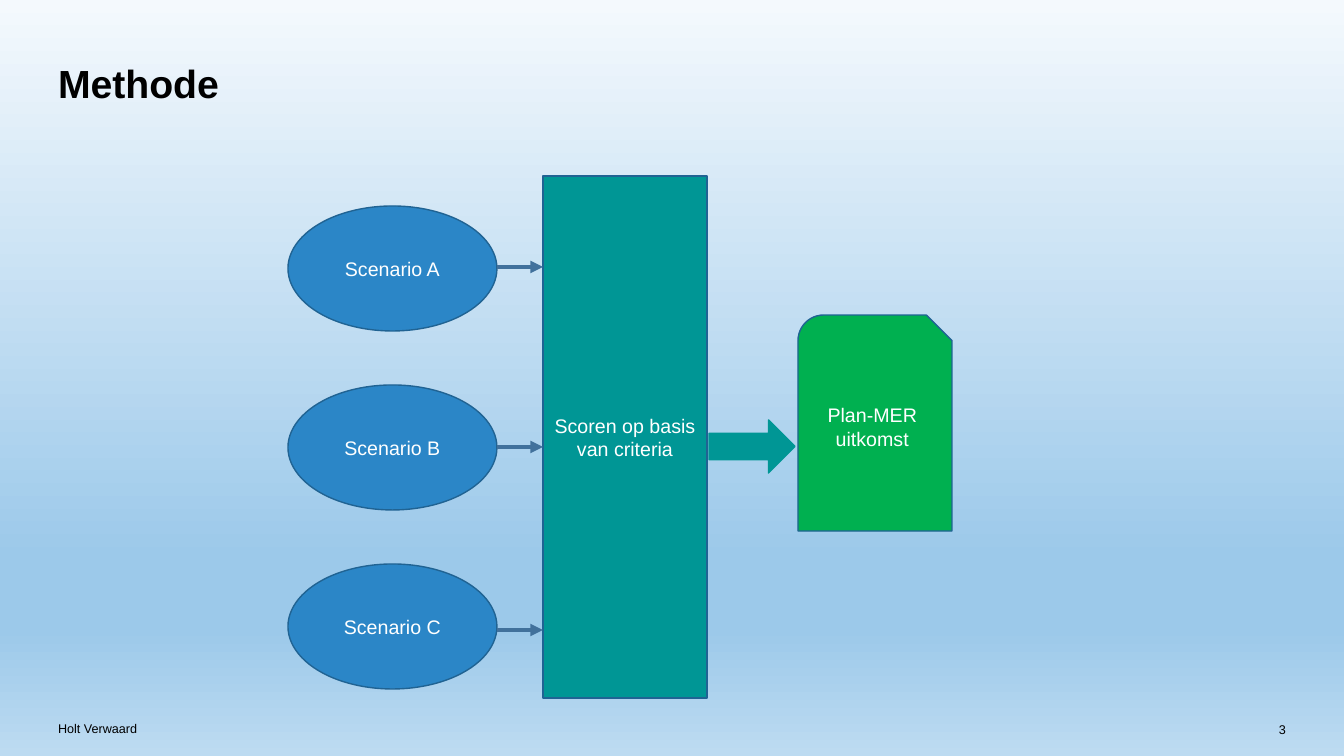
from lxml import etree
from pptx import Presentation
from pptx import util as u
from pptx.dml.color import RGBColor
from pptx.enum import shapes, text
from pptx.oxml import ns

PX = 12192000 / 1344
BLACK = RGBColor(0x00, 0x00, 0x00)
WHITE = RGBColor(0xFF, 0xFF, 0xFF)
BLUE = RGBColor(0x2B, 0x86, 0xC7)
OUTLINE = RGBColor(0x20, 0x63, 0x93)
ARROW = RGBColor(0x41, 0x71, 0x9C)
TEAL = RGBColor(0x00, 0x96, 0x95)
GREEN = RGBColor(0x00, 0xB0, 0x50)
SKY = [(0, RGBColor(0xF4, 0xF9, 0xFD)), (74, RGBColor(0x9C, 0xC9, 0xEA)),
       (83, RGBColor(0x9C, 0xC9, 0xEA)), (100, RGBColor(0xBD, 0xDB, 0xF1))]


def px(*lengths):
    return [round(n * PX) for n in lengths]


def write(sp, words, size, color, align, anchor, margin=None, bold=False):
    tf = sp.text_frame
    tf.word_wrap = True
    tf.vertical_anchor = anchor
    if margin is not None:
        tf.margin_left = tf.margin_right = tf.margin_top = tf.margin_bottom = margin
    p = tf.paragraphs[0]
    p.text = words
    p.alignment = align
    p.font.name = "Arial"
    p.font.size = u.Pt(size)
    p.font.bold = bold
    p.font.color.rgb = color


prs = Presentation()
prs.slide_width, prs.slide_height = px(1344, 756)
s = prs.slides.add_slide(prs.slide_layouts[5])

# Background gradient, top to bottom
fill = s.background.fill
fill.gradient()
fill.gradient_angle = 270
stops = next(s.element.iter(ns.qn("a:gsLst")))
for stop in list(stops):
    stops.remove(stop)
for position, color in SKY:
    stop = etree.SubElement(stops, ns.qn("a:gs"), pos=str(position * 1000))
    etree.SubElement(stop, ns.qn("a:srgbClr"), val=str(color))

# Title
title = s.shapes.title
title.left, title.top, title.width, title.height = px(58, 58, 1228, 50)
write(title, "Methode", 28, BLACK, text.PP_ALIGN.LEFT, text.MSO_ANCHOR.MIDDLE, 0, True)

# Footer and slide number
for words, box, align in [
    ("Holt Verwaard", (58, 721, 243, 16), text.PP_ALIGN.LEFT),
    ("3", (1223, 722, 63, 14), text.PP_ALIGN.RIGHT),
]:
    sp = s.shapes.add_textbox(*px(*box))
    write(sp, words, 9, BLACK, align, text.MSO_ANCHOR.TOP, 0)

# Scenarios, scoring block, block arrow and outcome
kind = shapes.MSO_SHAPE
blocks = [(kind.OVAL, (288, 206 + 179 * i, 209, 125), BLUE, OUTLINE, f"Scenario {letter}")
          for i, letter in enumerate("ABC")]
blocks += [
    (kind.RECTANGLE, (543, 176, 164, 522), TEAL, OUTLINE, "Scoren op basis van criteria"),
    (kind.RIGHT_ARROW, (709, 420, 86, 53), TEAL, TEAL, ""),
    (kind.SNIP_ROUND_RECTANGLE, (798, 315, 154, 216), GREEN, OUTLINE, "Plan-MER uitkomst"),
]
for shape_kind, box, color, outline, words in blocks:
    sp = s.shapes.add_shape(shape_kind, *px(*box))
    sp.shadow.inherit = False
    sp.fill.solid()
    sp.fill.fore_color.rgb = color
    sp.line.color.rgb = outline
    sp.line.width = u.Pt(1)
    if words:
        write(sp, words, 14, WHITE, text.PP_ALIGN.CENTER, text.MSO_ANCHOR.MIDDLE)

# Arrows from the scenarios to the scoring block
for y in (267, 447, 630):
    arrow = s.shapes.add_connector(shapes.MSO_CONNECTOR.STRAIGHT, *px(497, y, 543, y))
    arrow.line.color.rgb = ARROW
    arrow.line.width = u.Pt(3)
    etree.SubElement(arrow.line._get_or_add_ln(), ns.qn("a:tailEnd"), type="triangle")
    etree.SubElement(arrow._element.spPr, ns.qn("a:effectLst"))

prs.save("out.pptx")
